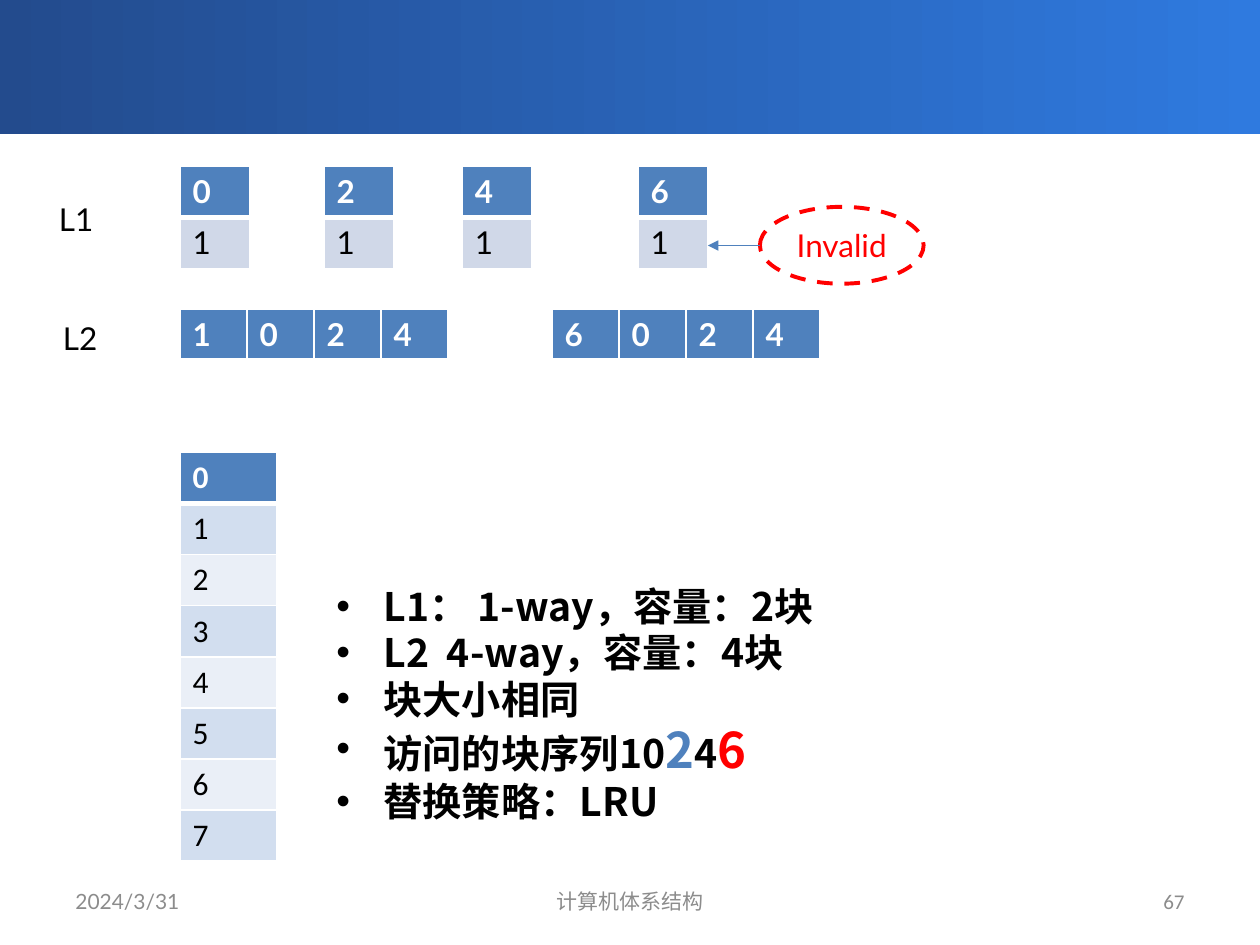
from lxml.etree import SubElement
from pptx import Presentation
from pptx.dml.color import RGBColor
from pptx.enum.dml import MSO_LINE
from pptx.enum.shapes import MSO_CONNECTOR, MSO_SHAPE
from pptx.enum.text import MSO_ANCHOR, PP_ALIGN
from pptx.oxml.ns import qn
from pptx.util import Cm, Pt

BLUE, RED, WHITE, BLACK, GREY = "4F81BD", "FF0000", "FFFFFF", "000000", "8C8C8C"
CJK = "Noto Sans CJK SC"


def colour(hex_string):
    return RGBColor.from_string(hex_string)


def set_format(target, values):
    for name, value in values.items():
        setattr(target, name, value)


class SlideBuilder:
    LABEL = {"name": "Lato", "size": Pt(18), "bold": False}
    FOOTER = {"name": "Lato", "size": Pt(12), "bold": False}
    BULLET = {"name": CJK, "size": Pt(22.4), "bold": True}
    EMPHASIS = {**BULLET, "size": Pt(28)}
    ROW_HEIGHT = Cm(1.03)

    def __init__(self, slide):
        self.slide = slide
        self.shapes = slide.shapes

    def run(self, paragraph, text, style, ink):
        run = paragraph.add_run()
        run.text = text
        set_format(run.font, style)
        run.font.color.rgb = colour(ink)
        SubElement(run.font._element, qn("a:ea"), typeface=CJK)

    def banner(self, height, start, end):
        bar = self.shapes.add_shape(MSO_SHAPE.RECTANGLE, 0, 0, Cm(25.4), Cm(height))
        bar.shadow.inherit = False
        bar.line.fill.background()
        bar.fill.gradient()
        bar.fill.gradient_angle = 0
        for stop, position, ink in zip(bar.fill.gradient_stops, (0, 1), (start, end)):
            stop.position = position
            stop.color.rgb = colour(ink)

    def frame(self, left, top, width, height, anchor=MSO_ANCHOR.TOP):
        box = self.shapes.add_textbox(Cm(left), Cm(top), Cm(width), Cm(height))
        set_format(box.text_frame, {"word_wrap": True, "vertical_anchor": anchor})
        return box.text_frame

    def text(self, text, left, top, width, style, ink=BLACK, align=PP_ALIGN.LEFT):
        frame = self.frame(left, top, width, 1.02, MSO_ANCHOR.MIDDLE)
        paragraph = frame.paragraphs[0]
        paragraph.alignment = align
        self.run(paragraph, text, style, ink)

    def bullets(self, items, left, top, width, height):
        """Each item is a list of (text, style, colour) runs."""
        frame = self.frame(left, top, width, height)
        for index, runs in enumerate(items):
            paragraph = frame.add_paragraph() if index else frame.paragraphs[0]
            properties = paragraph._p.get_or_add_pPr()
            properties.set("marL", str(Cm(0.95)))
            properties.set("indent", str(-Cm(0.95)))
            SubElement(properties, qn("a:buFont"), typeface="Arial")
            SubElement(properties, qn("a:buChar"), char="•")
            set_format(paragraph, {"line_spacing": 0.8,
                                   "space_before": Pt(5 if index else 0)})
            for text, style, ink in runs:
                self.run(paragraph, text, style, ink)

    def borders(self, cell, top, bottom):
        properties = cell._tc.get_or_add_tcPr()
        sides = {"a:lnL": 1, "a:lnR": 1, "a:lnT": top, "a:lnB": bottom}
        for index, (side, points) in enumerate(sides.items()):
            line = SubElement(properties, qn(side), w=str(Pt(points)))
            fill = SubElement(line, qn("a:solidFill"))
            SubElement(fill, qn("a:srgbClr"), val=WHITE)
            properties.insert(index, line)

    def blocks(self, rows, left, top, column_width, bands=("D0D8E8",), font="Lato"):
        """Table with a blue first row and banded rows below it."""
        columns = len(rows[0])
        table = self.shapes.add_table(
            len(rows), columns, Cm(left), Cm(top),
            Cm(column_width * columns), self.ROW_HEIGHT * len(rows)).table
        for column in table.columns:
            column.width = Cm(column_width)
        for r, values in enumerate(rows):
            table.rows[r].height = self.ROW_HEIGHT
            header = r == 0
            for c, value in enumerate(values):
                cell = table.cell(r, c)
                cell.fill.solid()
                cell.fill.fore_color.rgb = colour(BLUE if header else bands[(r - 1) % len(bands)])
                self.borders(cell, 3 if r == 1 else 1, 3 if header else 1)
                style = {**self.LABEL, "name": font, "bold": header}
                self.run(cell.text_frame.paragraphs[0], value, style,
                         WHITE if header else BLACK)

    def callout(self, text, left, top, width, height, ink):
        oval = self.shapes.add_shape(MSO_SHAPE.OVAL, Cm(left), Cm(top), Cm(width), Cm(height))
        oval.shadow.inherit = False
        oval.fill.background()
        set_format(oval.line, {"width": Pt(2.25), "dash_style": MSO_LINE.DASH})
        oval.line.color.rgb = colour(ink)
        set_format(oval.text_frame, {"word_wrap": True, "margin_left": 0, "margin_right": 0,
                                     "vertical_anchor": MSO_ANCHOR.MIDDLE})
        paragraph = oval.text_frame.paragraphs[0]
        paragraph.alignment = PP_ALIGN.CENTER
        self.run(paragraph, text, self.LABEL, ink)

    def arrow(self, start_x, end_x, y, ink):
        arrow = self.shapes.add_connector(
            MSO_CONNECTOR.STRAIGHT, Cm(start_x), Cm(y), Cm(end_x), Cm(y))
        arrow.line.width = Pt(1)
        arrow.line.color.rgb = colour(ink)
        SubElement(arrow.line._get_or_add_ln(), qn("a:tailEnd"), type="triangle")
        SubElement(arrow._element.spPr, qn("a:effectLst"))


def main():
    deck = Presentation()
    set_format(deck, {"slide_width": Cm(25.4), "slide_height": Cm(19.05)})
    page = SlideBuilder(deck.slides.add_slide(deck.slide_layouts[6]))
    page.banner(2.7, "234B8D", "2F7ADF")

    plain = page.BULLET
    page.bullets([
        [("L1： 1-way，容量：2块", plain, BLACK)],
        [("L2  4-way，容量：4块", plain, BLACK)],
        [("块大小相同", plain, BLACK)],
        [("访问的块序列10", plain, BLACK), ("2", page.EMPHASIS, BLUE),
         ("4", plain, BLACK), ("6", page.EMPHASIS, RED)],
        [("替换策略：LRU", plain, BLACK)],
    ], 6.53, 11.8, 17.55, 5.1)

    footers = [("2024/3/31", 1.27, 5.92, PP_ALIGN.LEFT, "Lato"),
               ("计算机体系结构", 8.68, 8.04, PP_ALIGN.CENTER, "Lato"),
               ("67", 18.2, 5.93, PP_ALIGN.RIGHT, "Calibri")]
    for text, left, width, align, font in footers:
        page.text(text, left, 17.66, width, {**page.FOOTER, "name": font}, GREY, align)

    memory_left = 3.63
    page.blocks([str(block) for block in range(8)], memory_left, 9.12, 1.95,
                ("D2DEEF", "EAEFF7"), "Calibri")
    for block, left in zip("0246", (memory_left, 6.53, 9.32, 12.86)):
        page.blocks([block, "1"], left, 3.35, 1.4)
    for ways, left in (("1024", memory_left), ("6024", 11.13)):
        page.blocks([ways], left, 6.23, 1.35)

    page.callout("Invalid", 15.32, 4.17, 3.3, 1.55, RED)
    page.arrow(15.32, 14.27, 4.95, BLUE)
    page.text("L1", 0.94, 3.91, 1.4, page.LABEL)
    page.text("L2", 1.02, 6.3, 1.4, page.LABEL)
    deck.save("out.pptx")


if __name__ == "__main__":
    main()
